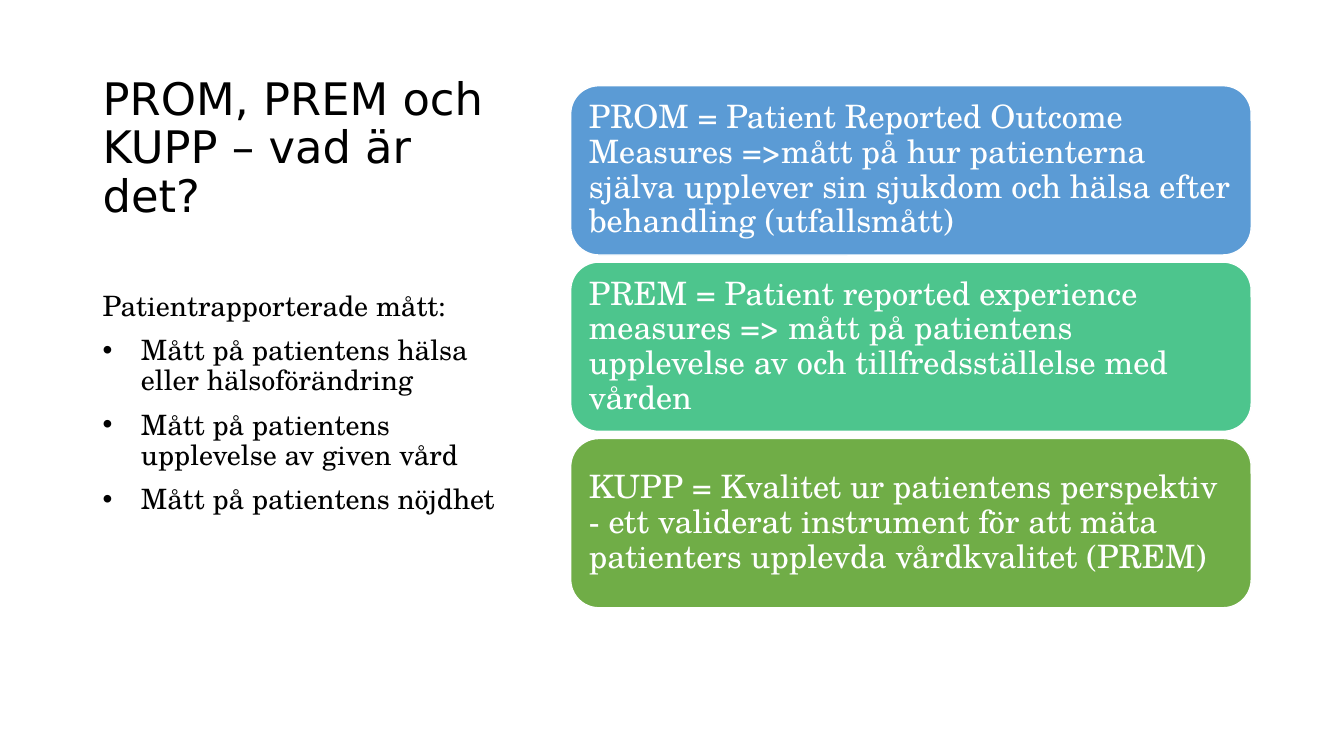
"""Build the slide that explains PROM, PREM and KUPP."""
from dataclasses import dataclass

from lxml import etree
from pptx import Presentation
from pptx.dml.color import RGBColor
from pptx.enum.shapes import MSO_SHAPE
from pptx.enum.text import MSO_ANCHOR, PP_ALIGN
from pptx.oxml.ns import qn
from pptx.util import Inches, Pt

ROUNDED = MSO_SHAPE.ROUNDED_RECTANGLE
TOP, MIDDLE, BOTTOM = MSO_ANCHOR.TOP, MSO_ANCHOR.MIDDLE, MSO_ANCHOR.BOTTOM
LEFT = PP_ALIGN.LEFT

TITLE = "PROM, PREM och KUPP – vad är det?"
INTRO = "Patientrapporterade mått:"
MEASURES = [
    "Mått på patientens hälsa eller hälsoförändring",
    "Mått på patientens upplevelse av given vård",
    "Mått på patientens nöjdhet",
]
CARDS = [
    ("PROM = Patient Reported Outcome Measures =>mått på hur patienterna själva "
     "upplever sin sjukdom och hälsa efter behandling (utfallsmått)", "5B9BD5"),
    ("PREM = Patient reported experience measures => mått på patientens "
     "upplevelse av och tillfredsställelse med vården", "4DC58D"),
    ("KUPP = Kvalitet ur patientens perspektiv - ett validerat instrument för "
     "att mäta patienters upplevda vårdkvalitet (PREM)", "70AD47"),
]

COLUMN_LEFT, COLUMN_WIDTH = 0.92, 4.3
CARD_LEFT, CARD_TOP, CARD_WIDTH, CARD_HEIGHT, CARD_STEP = 5.66, 0.85, 6.75, 1.68, 1.75
BULLET_INDENT = 0.38


@dataclass(frozen=True)
class Theme:
    heading_font: str = "DejaVu Sans"
    body_font: str = "TeX Gyre Schola"
    dark: str = "000000"
    light: str = "FFFFFF"
    title_size: int = 32
    body_size: int = 20
    card_size: int = 23
    line_spacing: float = 0.9
    paragraph_gap: int = 10


THEME = Theme()


def add_bullet(para):
    properties = para._p.get_or_add_pPr()
    properties.set("marL", str(Inches(BULLET_INDENT)))
    properties.set("indent", str(-Inches(BULLET_INDENT)))
    etree.SubElement(properties, qn("a:buFont")).set("typeface", "Arial")
    etree.SubElement(properties, qn("a:buChar")).set("char", "•")


def write(box, lines, font, size, color, anchor, bulleted=False):
    frame = box.text_frame
    frame.text = "\n".join(lines)
    frame.word_wrap = True
    frame.vertical_anchor = anchor
    for index, para in enumerate(frame.paragraphs):
        if bulleted and index:
            add_bullet(para)
        para.alignment = LEFT
        para.line_spacing = THEME.line_spacing
        para.space_before = Pt(THEME.paragraph_gap if index else 0)
        for span in para.runs:
            span.font.name = font
            span.font.size = Pt(size)
            span.font.color.rgb = RGBColor.from_string(color)


def add_column_text(page, top, height):
    return page.shapes.add_textbox(
        Inches(COLUMN_LEFT), Inches(top), Inches(COLUMN_WIDTH), Inches(height))


def add_card(page, index, text, color):
    card = page.shapes.add_shape(
        ROUNDED, Inches(CARD_LEFT), Inches(CARD_TOP + index * CARD_STEP),
        Inches(CARD_WIDTH), Inches(CARD_HEIGHT))
    card.shadow.inherit = False
    card.fill.solid()
    card.fill.fore_color.rgb = RGBColor.from_string(color)
    card.line.color.rgb = RGBColor.from_string(THEME.light)
    card.line.width = Pt(1)
    write(card, [text], THEME.body_font, THEME.card_size, THEME.light, MIDDLE)


def main():
    deck = Presentation()
    deck.slide_width, deck.slide_height = Inches(13.33), Inches(7.5)
    page = deck.slides.add_slide(deck.slide_layouts[6])
    write(add_column_text(page, 0.5, 1.75), [TITLE],
          THEME.heading_font, THEME.title_size, THEME.dark, BOTTOM)
    write(add_column_text(page, 2.85, 2.5), [INTRO, *MEASURES],
          THEME.body_font, THEME.body_size, THEME.dark, TOP, bulleted=True)
    for index, (text, color) in enumerate(CARDS):
        add_card(page, index, text, color)
    deck.save("out.pptx")


if __name__ == "__main__":
    main()
